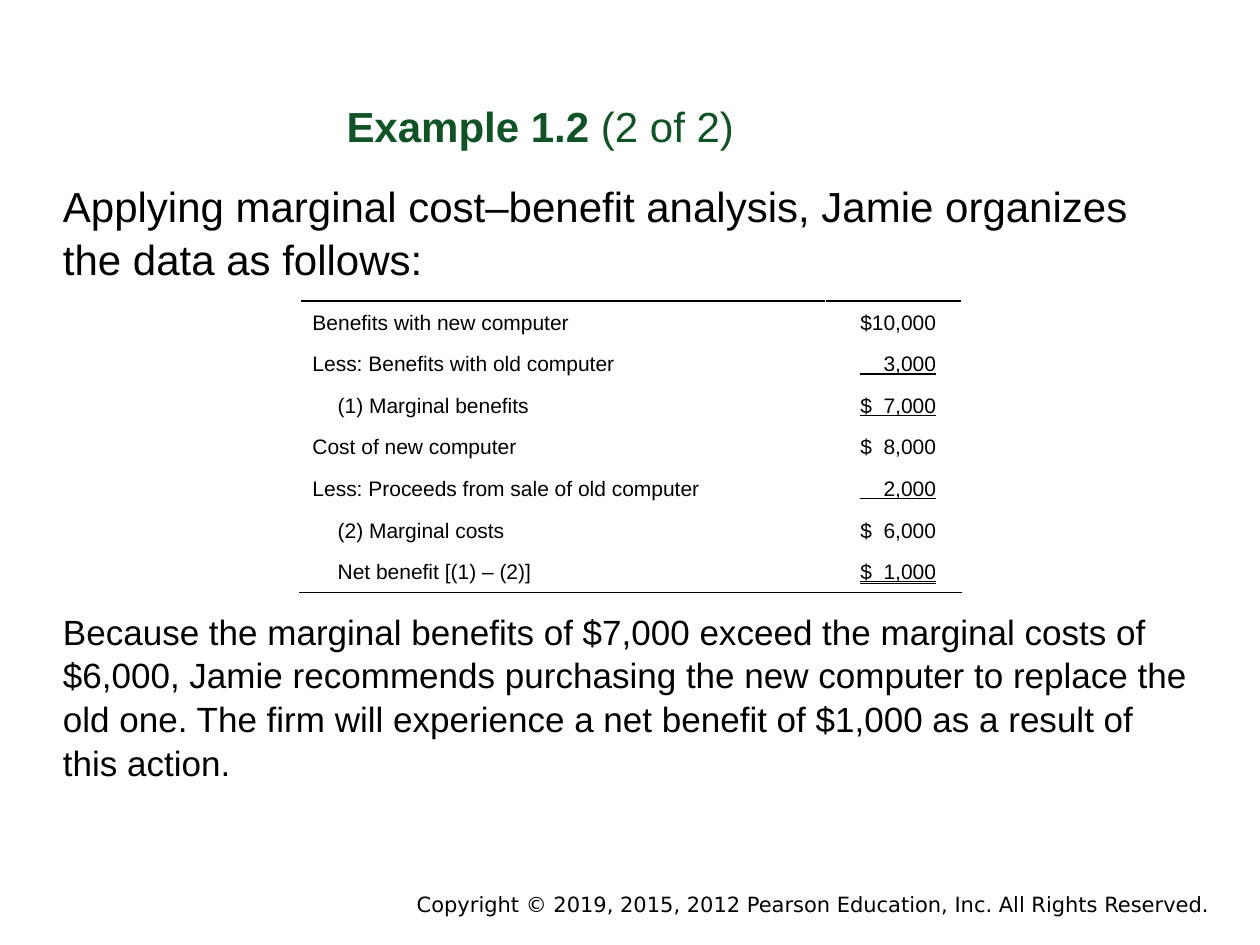
from lxml.etree import SubElement
from pptx import Presentation
from pptx.dml.color import RGBColor
from pptx.enum.text import MSO_ANCHOR, MSO_UNDERLINE, PP_ALIGN
from pptx.oxml.ns import qn
from pptx.util import Inches, Pt

BLACK = RGBColor(0x00, 0x00, 0x00)
GREEN = RGBColor(0x11, 0x53, 0x27)

TITLE_FONT = {"name": "Arial", "size": Pt(24)}
INTRO_FONT = {"name": "Arial", "size": Pt(24)}
CONCLUSION_FONT = {"name": "Arial", "size": Pt(20)}
TABLE_FONT = {"name": "Arial", "size": Pt(12)}
FOOTER_FONT = {"name": "DejaVu Sans", "size": Pt(12)}

INTRO = "Applying marginal cost–benefit analysis, Jamie organizes the data as follows:"
CONCLUSION = (
    "Because the marginal benefits of $7,000 exceed the marginal costs of $6,000, "
    "Jamie recommends purchasing the new computer to replace the old one. The firm "
    "will experience a net benefit of $1,000 as a result of this action."
)
COPYRIGHT = "Copyright © 2019, 2015, 2012 Pearson Education, Inc. All Rights Reserved."

SINGLE = MSO_UNDERLINE.SINGLE_LINE
DOUBLE = MSO_UNDERLINE.DOUBLE_LINE

# Label, label indent in inches, amount, underline of the amount.
# Padding inside an amount is part of the figure: the underline runs below it.
ROWS = [
    ("Benefits with new computer", 0.1, "$10,000", None),
    ("Less: Benefits with old computer", 0.1, "    3,000", SINGLE),
    ("(1) Marginal benefits", 0.3, "$  7,000", SINGLE),
    ("Cost of new computer", 0.1, "$  8,000", None),
    ("Less: Proceeds from sale of old computer", 0.1, "    2,000", SINGLE),
    ("(2) Marginal costs", 0.3, "$  6,000", None),
    ("Net benefit [(1) – (2)]", 0.3, "$  1,000", DOUBLE),
]
COLUMN_WIDTHS = [4.17, 1.08]
ROW_HEIGHT = 0.31


def add_run(paragraph, text, font_values, color=BLACK):
    run = paragraph.add_run()
    run.text = text
    for name, value in font_values.items():
        setattr(run.font, name, value)
    run.font.color.rgb = color


def place(shape, left, top, width, height):
    box = {"left": left, "top": top, "width": width, "height": height}
    for name, value in box.items():
        setattr(shape, name, Inches(value))


def set_margins(target, left=0, top=0, right=0, bottom=0):
    margins = {"left": left, "top": top, "right": right, "bottom": bottom}
    for side, value in margins.items():
        setattr(target, f"margin_{side}", Inches(value))


def add_title(slide):
    title = slide.shapes.title
    place(title, 2.75, 0, 9, 1.2)
    frame = title.text_frame
    set_margins(frame)
    frame.vertical_anchor = MSO_ANCHOR.BOTTOM
    paragraph = frame.paragraphs[0]
    paragraph.alignment = PP_ALIGN.LEFT
    add_run(paragraph, "Example 1.2 ", {**TITLE_FONT, "bold": True}, GREEN)
    add_run(paragraph, "(2 of 2)", {**TITLE_FONT, "bold": False}, GREEN)


def add_text(slide, text, box, font_values, line_spacing=1.04):
    shape = slide.shapes.add_textbox(*map(Inches, box))
    frame = shape.text_frame
    frame.word_wrap = True
    set_margins(frame)
    paragraph = frame.paragraphs[0]
    paragraph.line_spacing = line_spacing
    add_run(paragraph, text, font_values)
    return shape


def add_border(cell, tag):
    """Draw a 1 pt black rule on one side of a cell, ahead of its fill."""
    properties = cell._tc.get_or_add_tcPr()
    line = SubElement(properties, qn(tag), w=str(Pt(1)))
    fill = SubElement(line, qn("a:solidFill"))
    SubElement(fill, qn("a:srgbClr"), val=str(BLACK))
    properties.insert(0, line)


def fill_cell(cell, text, alignment, margins, underline=None):
    cell.fill.background()
    set_margins(cell, top=0.05, bottom=0.05, **margins)
    paragraph = cell.text_frame.paragraphs[0]
    paragraph.alignment = alignment
    paragraph.line_spacing = 1.15
    add_run(paragraph, text, {**TABLE_FONT, "underline": underline})


def add_cost_benefit_table(slide):
    frame = slide.shapes.add_table(
        len(ROWS), len(COLUMN_WIDTHS), Inches(2.38), Inches(2.39),
        Inches(sum(COLUMN_WIDTHS)), Inches(ROW_HEIGHT * len(ROWS)))
    table = frame.table
    table.first_row = table.horz_banding = False
    for column, width in zip(table.columns, COLUMN_WIDTHS):
        column.width = Inches(width)

    for index, (label, indent, amount, underline) in enumerate(ROWS):
        table.rows[index].height = Inches(ROW_HEIGHT)
        fill_cell(table.cell(index, 0), label, PP_ALIGN.LEFT,
                  {"left": indent, "right": 0.1})
        fill_cell(table.cell(index, 1), amount, PP_ALIGN.RIGHT,
                  {"left": 0.1, "right": 0.2}, underline)

    # Rules above the first row and below the last
    for column in range(len(COLUMN_WIDTHS)):
        add_border(table.cell(0, column), "a:lnT")
        add_border(table.cell(len(ROWS) - 1, column), "a:lnB")


def add_footer(slide):
    footer = add_text(slide, COPYRIGHT, (2.95, 7.03, 6.75, 0.3), FOOTER_FONT, 1.0)
    set_margins(footer.text_frame, 0.1, 0.05, 0.1, 0.05)
    footer.text_frame.paragraphs[0].alignment = PP_ALIGN.RIGHT


def main():
    presentation = Presentation()
    presentation.slide_width = Inches(10)
    presentation.slide_height = Inches(7.5)
    slide = presentation.slides.add_slide(presentation.slide_layouts[5])

    add_footer(slide)
    add_title(slide)
    add_text(slide, INTRO, (0.5, 1.42, 9, 0.83), INTRO_FONT)
    add_cost_benefit_table(slide)
    add_text(slide, CONCLUSION, (0.5, 4.83, 9, 1.67), CONCLUSION_FONT)

    presentation.save("out.pptx")


if __name__ == "__main__":
    main()
